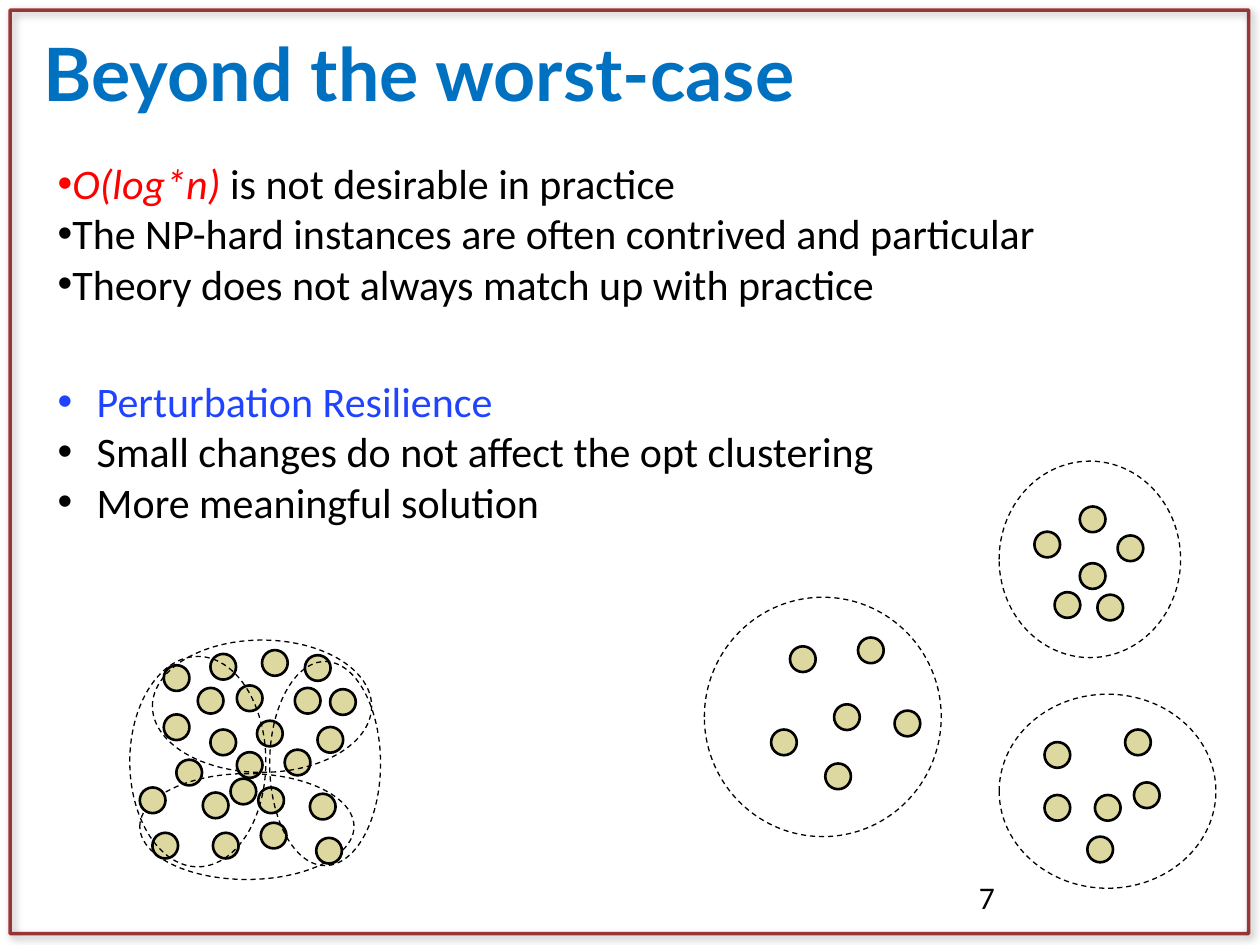
from lxml.etree import SubElement
from pptx import Presentation
from pptx.dml.color import RGBColor
from pptx.enum.dml import MSO_LINE
from pptx.enum.shapes import MSO_SHAPE as SHAPE
from pptx.oxml import parse_xml
from pptx.oxml.ns import nsdecls, qn
from pptx.util import Inches, Pt

COLUMNS, ROWS = 100, 75
DOT = 2.04

deck = Presentation()
deck.slide_width, deck.slide_height = Inches(10), Inches(7.5)
slide = deck.slides.add_slide(deck.slide_layouts[6])
column, row = deck.slide_width / COLUMNS, deck.slide_height / ROWS
rgb = RGBColor.from_string


def outline(preset, left, top, width, height, color, weight, fill=None):
    """Add a shape, measured in grid columns and rows, filled only if asked."""
    shape = slide.shapes.add_shape(preset, int(left * column), int(top * row),
                                   int(width * column), int(height * row))
    shape.shadow.inherit = False
    if fill:
        shape.fill.solid()
        shape.fill.fore_color.rgb = rgb(fill)
    else:
        shape.fill.background()
    shape.line.color.rgb = rgb(color)
    shape.line.width = Pt(weight)
    return shape


def write(left, top, width, height, lines, indent=None, **base):
    """Add a text box; each line is a list of (text, format) runs."""
    box = slide.shapes.add_textbox(int(left * column), int(top * row),
                                   int(width * column), int(height * row))
    frame = box.text_frame
    frame.word_wrap = True
    for number, runs in enumerate(lines):
        paragraph = frame.add_paragraph() if number else frame.paragraphs[0]
        if indent is not None:
            props = paragraph._p.get_or_add_pPr()
            props.set("marL", str(Inches(indent)))
            props.set("indent", str(-Inches(indent)))
            SubElement(props, qn("a:buFont"), typeface="Arial")
            SubElement(props, qn("a:buChar"), char="•")
        for text, extra in runs:
            run = paragraph.add_run()
            run.text = text
            values = {"name": "Calibri", "color": "000000", **base, **extra}
            run.font.color.rgb = rgb(values.pop("color"))
            for key, value in values.items():
                setattr(run.font, key, value)


# Frame around the slide
border = outline(SHAPE.RECTANGLE, 0.8, 0.8, 98.3, 73.3, "800000", 2)
border_color = border.line._ln.find(".//" + qn("a:srgbClr"))
SubElement(border_color, qn("a:alpha"), val="76000")
effects = border._element.spPr.find(qn("a:effectLst"))
effects.append(parse_xml(
    f'<a:outerShdw {nsdecls("a")} blurRad="{Pt(4)}" dist="{Pt(3)}" dir="2700000"'
    ' rotWithShape="0"><a:srgbClr val="000000"><a:alpha val="43000"/></a:srgbClr>'
    '</a:outerShdw>'))

# Wording
write(2.5, 1.7, 95, 11.6, [[("Beyond the worst-case", {})]],
      name="Lato", size=Pt(42), bold=True, color="0070C0")
write(3.6, 12, 84.7, 13.1, [
    [("O(log*n)", {"color": "FF0000", "italic": True}),
     (" is not desirable in practice", {})],
    [("The NP-hard instances are often contrived and particular", {})],
    [("Theory does not always match up with practice", {})],
], indent=0, size=Pt(24))
write(3.6, 29.3, 77.4, 13.1, [
    [("Perturbation Resilience", {"color": "1F43FF"})],
    [("Small changes do not affect the opt clustering", {})],
    [("More meaningful solution", {})],
], indent=0.31, size=Pt(24))
write(76.7, 69.2, 20.8, 5, [[("7", {})]], size=Pt(18))

# Each group: left and top of its points, then the clusters drawn over them
groups = [
    # Well separated clusters
    ([(65.5, 60.6), (61.2, 57.9), (62.7, 51.3), (66.2, 55.9), (68.1, 50.6),
      (71, 56.4)], [(55.9, 47.4, 18.8, 19)]),
    ([(82.9, 63.1), (82.9, 58.9), (86.3, 66.4), (86.9, 63.1), (90, 62.1),
      (89.3, 57.9)], [(79.3, 55.1, 17.2, 15.4)]),
    ([(83.7, 47), (82.1, 42.2), (85.7, 40.2), (85.7, 44.7), (87.1, 47.2),
      (88.7, 42.5)], [(79.3, 36.6, 14.4, 15.6)]),
    # Overlapping clusters: upper points, then lower points
    ([(13, 52.8), (16.7, 51.9), (15.7, 54.6), (13, 56.7), (16.7, 57.9),
      (18.8, 54.4), (20.8, 51.6), (23.4, 54.6), (20.4, 57.2), (14, 60.3),
      (18.8, 59.7), (22.6, 59.5), (25.2, 57.7), (24.2, 52), (26.2, 54.7)],
     [(12.1, 50.8, 17.4, 10.5), (11.1, 61.4, 17, 8.4)]),
    ([(18.3, 61.8), (11.1, 62.5), (16.1, 62.9), (20.5, 62.5), (12.1, 66.1),
      (16.9, 66.1), (20.7, 65.3), (24.6, 63), (25.1, 66.5)],
     [(10.3, 52.1, 10.8, 16.7), (21.4, 52.5, 8.8, 16.2)]),
]
for points, clusters in groups:
    for left, top in points:
        outline(SHAPE.FLOWCHART_CONNECTOR, left, top, DOT, DOT,
                "000000", 1.5, fill="DCD89F")
    for cluster in clusters:
        ring = outline(SHAPE.OVAL, *cluster, "000000", 0.75)
        ring.line.dash_style = MSO_LINE.DASH

deck.save("out.pptx")
